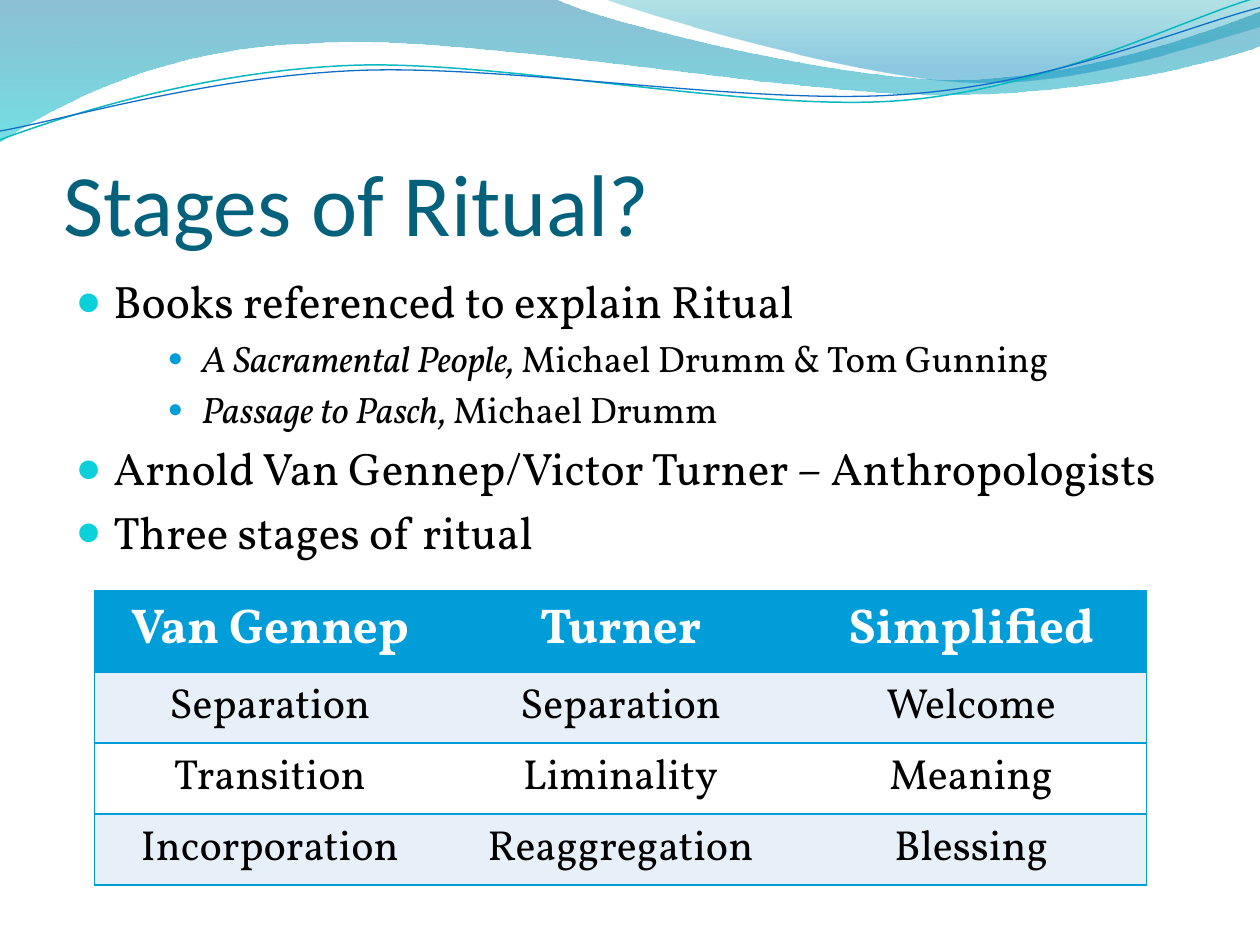
from lxml import etree
from pptx import Presentation
from pptx.dml.color import RGBColor
from pptx.enum.text import MSO_ANCHOR, PP_ALIGN
from pptx.oxml.ns import qn
from pptx.util import Inches, Pt

BOTTOM, MIDDLE, TOP = MSO_ANCHOR.BOTTOM, MSO_ANCHOR.MIDDLE, MSO_ANCHOR.TOP
LEFT, CENTER = PP_ALIGN.LEFT, PP_ALIGN.CENTER
BLACK = RGBColor(0x00, 0x00, 0x00)
WHITE = RGBColor(0xFF, 0xFF, 0xFF)
NAVY_TEAL = RGBColor(0x04, 0x61, 0x7B)
BLUE = RGBColor(0x00, 0x9D, 0xD9)
CYAN = RGBColor(0x0B, 0xD0, 0xD9)
PALE_BLUE = RGBColor(0xE7, 0xEF, 0xF8)
HEADING_FONT, TEXT_FONT = "Calibri", "Vollkorn"

TITLE = "Stages of Ritual?"
BULLETS = [
    (0, "", "Books referenced to explain Ritual"),
    (2, "A Sacramental People, ", "Michael Drumm & Tom Gunning"),
    (2, "Passage to Pasch, ", "Michael Drumm"),
    (0, "", "Arnold Van Gennep/Victor Turner – Anthropologists"),
    (0, "", "Three stages of ritual"),
]
LEVELS = {
    0: {"size": 26, "margin": 0.3, "hanging": 0.3, "color": CYAN, "percent": 95},
    2: {"size": 21, "margin": 1, "hanging": 0.27, "color": BLUE, "percent": 70},
}
STAGES = [
    ("Van Gennep", "Turner", "Simplified"),
    ("Separation", "Separation", "Welcome"),
    ("Transition", "Liminality", "Meaning"),
    ("Incorporation", "Reaggregation", "Blessing"),
]
BANDS = [
    {"segments": [[(0, 0)], [(4.4, -0.01)],
                  [(4.76, 0.17), (6.64, 0.63), (7.58, 0.63)],
                  [(8.53, 0.63), (9.58, 0.26), (10, 0.09)], [(10.01, 0.36)],
                  [(9.83, 0.44), (8.7, 0.76), (7.46, 0.75)],
                  [(6.22, 0.75), (3.82, 0.28), (2.57, 0.34)],
                  [(1.29, 0.36), (0.46, 0.83), (-0.01, 1.13)]],
     "stops": [(0, RGBColor(0x00, 0x74, 0xA1), 45), (1, RGBColor(0x00, 0xC6, 0xCF), 55)]},
    {"segments": [[(4.79, -0.01)], [(5.09, 0.11), (6.82, 0.62), (7.69, 0.65)],
                  [(8.56, 0.69), (9.61, 0.32), (10, 0.21)], [(10, 0)]],
     "stops": [(0, RGBColor(0x00, 0xA1, 0xA9), 30), (0.8, RGBColor(0x00, 0x8B, 0xBF), 45)]},
]
WAVES = [
    {"segments": [[(0, 1.11)], [(0.48, 0.93), (1.58, 0.57), (2.77, 0.52)],
                  [(3.95, 0.47), (5.93, 0.89), (7.13, 0.8)],
                  [(8.33, 0.71), (9.38, 0.15), (9.98, -0.02)]],
     "color": RGBColor(0x0A, 0xB8, 0xBF), "width": 0.85},
    {"segments": [[(0, 1.04)], [(0.47, 0.96), (1.64, 0.61), (2.83, 0.56)],
                  [(4.03, 0.51), (5.97, 0.84), (7.17, 0.75)],
                  [(8.36, 0.67), (9.41, 0.21), (10, 0.06)]],
     "color": RGBColor(0x0F, 0x6F, 0xC6), "width": 0.75},
]


def set_values(target, values):
    for name, value in values.items():
        setattr(target, name, value)


def add_element(parent, tag, **attributes):
    return etree.SubElement(parent, qn(tag), {key: str(value) for key, value in attributes.items()})


def place(shape, left, top, width, height):
    set_values(shape, {"left": Inches(left), "top": Inches(top),
                       "width": Inches(width), "height": Inches(height)})


def write(para, text, size, color, font=TEXT_FONT, bold=False, italic=False):
    span = para.add_run()
    span.text = text
    set_values(span.font, {"name": font, "size": Pt(size), "bold": bold, "italic": italic})
    span.font.color.rgb = color


def draw_outline(page, segments, close):
    corners = [(Inches(x), Inches(y)) for x, y in (segment[-1] for segment in segments)]
    builder = page.shapes.build_freeform(*corners[0])
    builder.add_line_segments(corners[1:], close=close)
    shape = builder.convert_to_shape()
    shape.shadow.inherit = False
    edges = list(shape._element.iter(qn("a:lnTo")))
    for edge, segment in zip(edges, segments[1:]):
        if len(segment) == 3:
            curve = etree.Element(qn("a:cubicBezTo"))
            for x, y in segment:
                add_element(curve, "a:pt", x=Inches(x) - shape.left, y=Inches(y) - shape.top)
            edge.getparent().replace(edge, curve)
    return shape


def add_waves(page):
    for band in BANDS:
        shape = draw_outline(page, band["segments"], True)
        shape.line.fill.background()
        shape.fill.gradient()
        shape.fill.gradient_angle = 270
        for stop, (position, color, opacity) in zip(shape.fill.gradient_stops, band["stops"]):
            stop.position = position
            stop.color.rgb = color
        tints = shape._element.spPr.iter(qn("a:srgbClr"))
        for tint, (position, color, opacity) in zip(tints, band["stops"]):
            add_element(tint, "a:alpha", val=opacity * 1000)
    for wave in WAVES:
        shape = draw_outline(page, wave["segments"], False)
        shape.fill.background()
        shape.line.color.rgb = wave["color"]
        shape.line.width = Pt(wave["width"])


def add_title(page):
    title = page.shapes.title
    place(title, 0.5, 0.77, 9, 1.25)
    set_values(title.text_frame, {"vertical_anchor": BOTTOM, "margin_left": 0, "margin_right": 0,
                                  "margin_top": Inches(0.05), "margin_bottom": 0})
    para = title.text_frame.paragraphs[0]
    para.alignment = LEFT
    write(para, TITLE, 50, NAVY_TEAL, HEADING_FONT)


def add_bullets(page):
    body = page.placeholders[1]
    place(body, 0.5, 2.12, 9, 4.8)
    frame = body.text_frame
    for index, (level, book, text) in enumerate(BULLETS):
        para = frame.add_paragraph() if index else frame.paragraphs[0]
        para.level = level
        style = LEVELS[level]
        properties = para._p.get_or_add_pPr()
        properties.set("marL", str(Inches(style["margin"])))
        properties.set("indent", str(-Inches(style["hanging"])))
        add_element(add_element(properties, "a:buClr"), "a:srgbClr", val=style["color"])
        add_element(properties, "a:buSzPct", val=style["percent"] * 1000)
        add_element(properties, "a:buChar", char="●")
        if book:
            write(para, book, style["size"], BLACK, italic=True)
        write(para, text, style["size"], BLACK)


def add_borders(cell, visible):
    properties = cell._tc.get_or_add_tcPr()
    for side in "LRTB":
        line = add_element(properties, "a:ln" + side, w=Pt(1))
        if side in visible:
            add_element(add_element(line, "a:solidFill"), "a:srgbClr", val=BLUE)
        else:
            add_element(line, "a:noFill")


def add_stages(page):
    columns = len(STAGES[0])
    table = page.shapes.add_table(len(STAGES), columns, Inches(0.75), Inches(4.69),
                                  Inches(8.35), Inches(2.22)).table
    for row, texts in enumerate(STAGES):
        header = row == 0
        fill = BLUE if header else PALE_BLUE if row % 2 else WHITE
        for column, text in enumerate(texts):
            cell = table.cell(row, column)
            sides = "TB" + "L" * (column == 0) + "R" * (column == columns - 1)
            add_borders(cell, sides)
            cell.fill.solid()
            cell.fill.fore_color.rgb = fill
            cell.vertical_anchor = TOP if header else MIDDLE
            para = cell.text_frame.paragraphs[0]
            para.alignment = CENTER
            write(para, text, 28 if header else 24, WHITE if header else BLACK, bold=header)


def main():
    deck = Presentation()
    set_values(deck, {"slide_width": Inches(10), "slide_height": Inches(7.5)})
    page = deck.slides.add_slide(deck.slide_layouts[1])
    add_waves(page)
    add_title(page)
    add_bullets(page)
    add_stages(page)
    deck.save("out.pptx")


if __name__ == "__main__":
    main()
